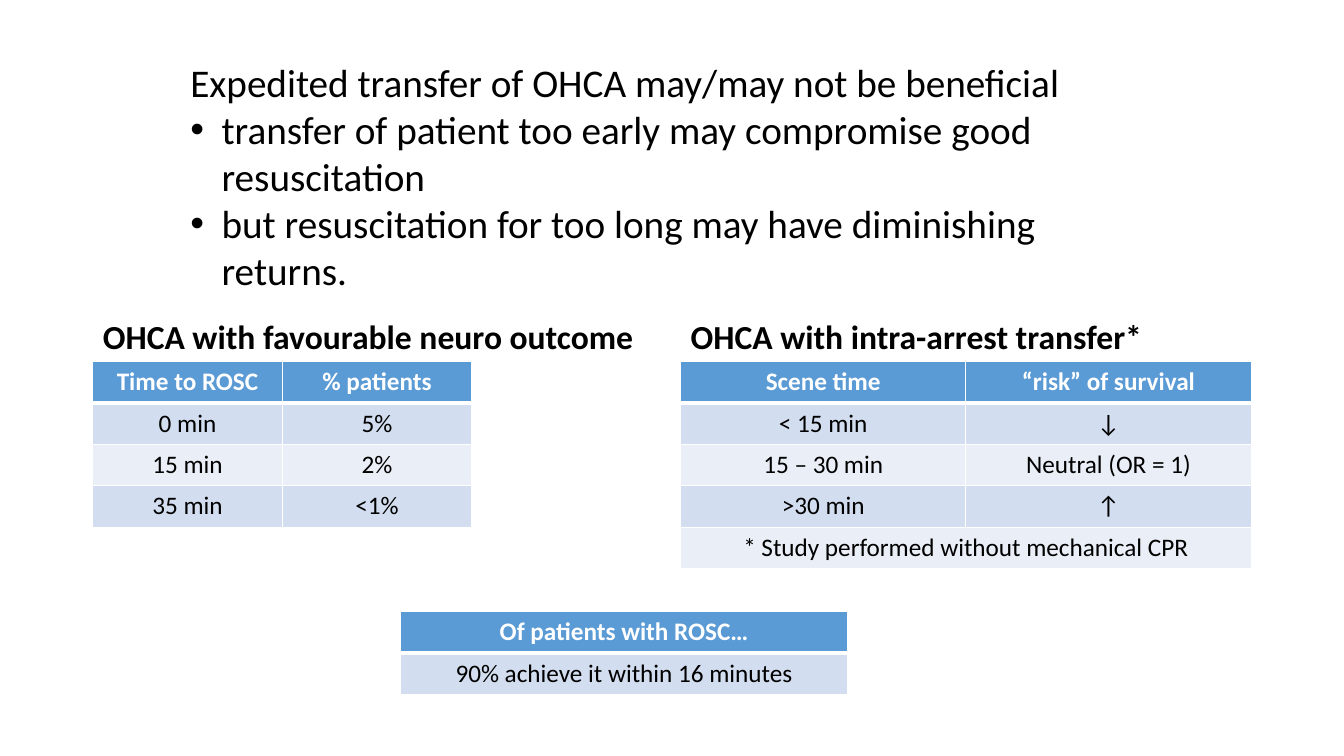
from dataclasses import dataclass

from lxml.etree import SubElement
from pptx import Presentation
from pptx.dml.color import RGBColor
from pptx.enum.text import MSO_ANCHOR as Anchor, MSO_AUTO_SIZE as Fit, PP_ALIGN as Align
from pptx.oxml.ns import qn
from pptx.slide import Slide
from pptx.table import _Cell as Cell
from pptx.text.text import _Paragraph as Para
from pptx.util import Emu, Pt

PX = 9144  # 100 px to the inch
FONT = "Calibri"
BLACK, WHITE = "000000", "FFFFFF"
BLUE, BANDS = "5B9BD5", ("D2DEEF", "EAEFF7")
ROW = 41
INDENT = 31


@dataclass
class Head:
    slot: int
    left: int
    width: int
    text: str


@dataclass
class Grid:
    left: int
    top: int
    col: int
    rows: list[tuple[str, ...]]


HEADS = [
    Head(1, 92, 564, "OHCA with favourable neuro outcome"),
    Head(3, 675, 567, "OHCA with intra-arrest transfer*"),
]
GRIDS = [
    Grid(92, 359, 188, [
        ("Time to ROSC", "% patients"),
        ("0 min", "5%"),
        ("15 min", "2%"),
        ("35 min", "<1%"),
    ]),
    Grid(675, 359, 283, [
        ("Scene time", "“risk” of survival"),
        ("< 15 min", "↓"),
        ("15 – 30 min", "Neutral (OR = 1)"),
        (">30 min", "↑"),
        ("* Study performed without mechanical CPR",),
    ]),
    Grid(397, 607, 444, [
        ("Of patients with ROSC…",),
        ("90% achieve it within 16 minutes",),
    ]),
]
LEAD = "Expedited transfer of OHCA may/may not be beneficial"
POINTS = [
    "transfer of patient too early may compromise good resuscitation",
    "but resuscitation for too long may have diminishing returns.",
]


def px(num: int) -> Emu:
    return Emu(num * PX)


def rgb(code: str) -> RGBColor:
    return RGBColor.from_string(code)


def add_run(para: Para, text: str, size: int, color: str = BLACK, bold: bool = False) -> None:
    run = para.add_run()
    run.text = text
    font = run.font
    font.name, font.size, font.bold = FONT, Pt(size), bold
    font.color.rgb = rgb(color)


def add_edges(cell: Cell, row: int) -> None:
    """Draw white cell borders, thick between the header and the body."""
    props = cell._tc.get_or_add_tcPr()
    thick = {"lnB": row == 0, "lnT": row == 1}
    for side in ("lnL", "lnR", "lnT", "lnB"):
        width = Pt(3 if thick.get(side) else 1)
        line = SubElement(props, qn(f"a:{side}"), w=str(width))
        fill = SubElement(line, qn("a:solidFill"))
        SubElement(fill, qn("a:srgbClr"), val=WHITE)


def add_bullet(para: Para) -> None:
    props = para._p.get_or_add_pPr()
    props.set("marL", str(px(INDENT)))
    props.set("indent", str(-px(INDENT)))
    SubElement(props, qn("a:buFont"), typeface="Arial")
    SubElement(props, qn("a:buChar"), char="•")


def add_grid(slide: Slide, grid: Grid) -> None:
    count, cols = len(grid.rows), len(grid.rows[0])
    table = slide.shapes.add_table(
        count, cols, px(grid.left), px(grid.top), px(grid.col * cols), px(ROW * count)
    ).table
    for col in table.columns:
        col.width = px(grid.col)
    for row, texts in enumerate(grid.rows):
        table.rows[row].height = px(ROW)
        top = row == 0
        for col in range(cols):
            cell = table.cell(row, col)
            add_edges(cell, row)
            cell.fill.solid()
            cell.fill.fore_color.rgb = rgb(BLUE if top else BANDS[(row - 1) % 2])
        if len(texts) < cols:
            table.cell(row, 0).merge(table.cell(row, cols - 1))
        for col, text in enumerate(texts):
            para = table.cell(row, col).text_frame.paragraphs[0]
            para.alignment = Align.CENTER
            add_run(para, text, 18, WHITE if top else BLACK, top)


def set_heads(slide: Slide) -> None:
    """Fill the two heading placeholders and remove the others."""
    heads = {head.slot: head for head in HEADS}
    for shape in list(slide.placeholders):
        head = heads.get(shape.placeholder_format.idx)
        if head is None:
            shape.element.getparent().remove(shape.element)
            continue
        shape.left, shape.top = px(head.left), px(269)
        shape.width, shape.height = px(head.width), px(90)
        frame = shape.text_frame
        frame.vertical_anchor = Anchor.BOTTOM
        para = frame.paragraphs[0]
        para.line_spacing, para.space_before = 0.9, Pt(10)
        add_run(para, head.text, 24, bold=True)


def add_lead(slide: Slide) -> None:
    frame = slide.shapes.add_textbox(px(179), px(53), px(967), px(246)).text_frame
    frame.word_wrap = True
    frame.auto_size = Fit.SHAPE_TO_FIT_TEXT
    add_run(frame.paragraphs[0], LEAD, 28)
    for text in POINTS:
        para = frame.add_paragraph()
        add_bullet(para)
        add_run(para, text, 28)


def main() -> None:
    deck = Presentation()
    deck.slide_width, deck.slide_height = px(1333), px(750)
    slide = deck.slides.add_slide(deck.slide_layouts.get_by_name("Comparison"))
    set_heads(slide)
    for grid in GRIDS:
        add_grid(slide, grid)
    add_lead(slide)
    deck.save("out.pptx")


if __name__ == "__main__":
    main()
